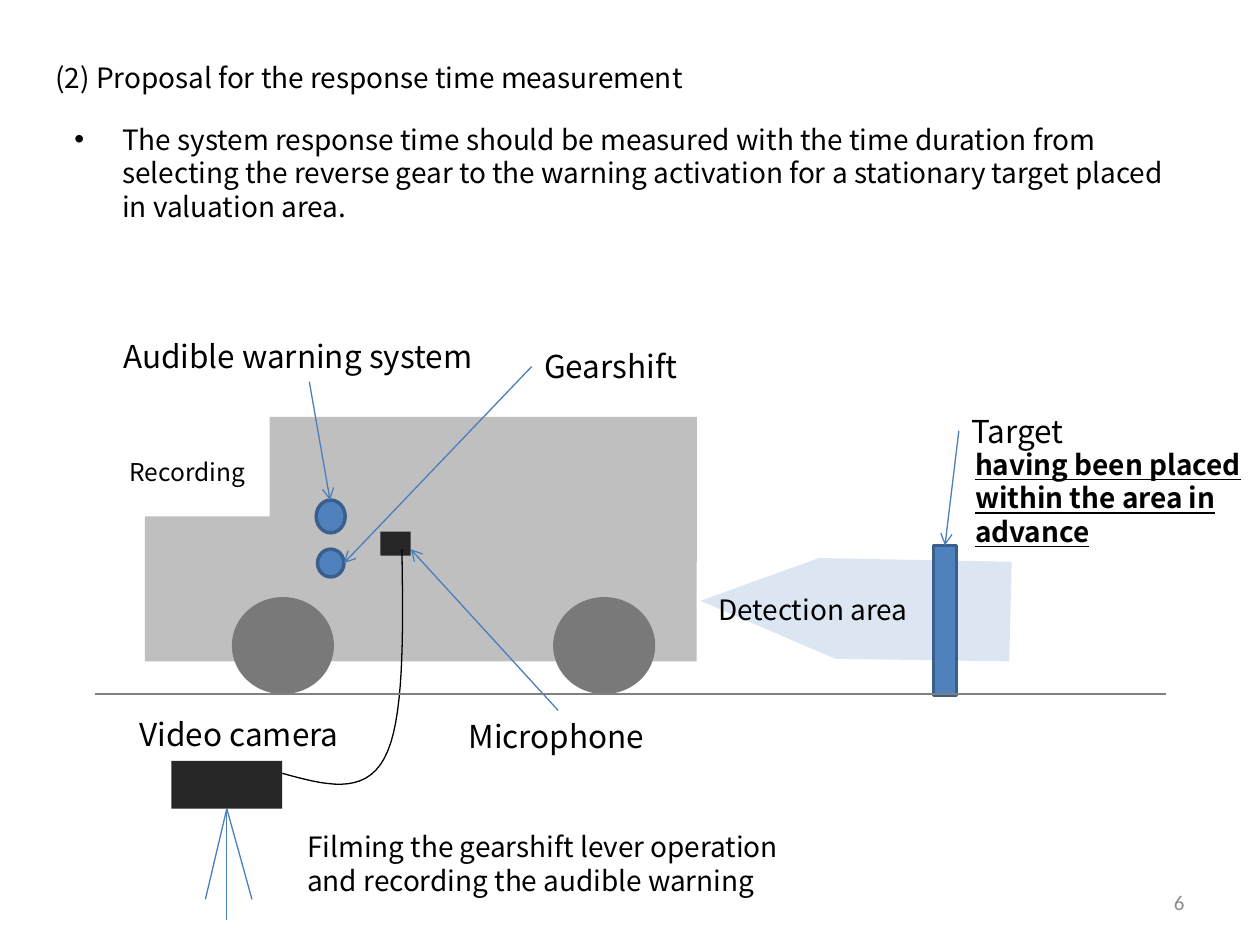
import pptx
import pptx.dml.color
import pptx.enum.shapes
import pptx.enum.text
import pptx.oxml.ns
import pptx.util

RGBColor = pptx.dml.color.RGBColor
Shapes = pptx.enum.shapes.MSO_SHAPE
Align = pptx.enum.text.PP_ALIGN
Anchor = pptx.enum.text.MSO_ANCHOR
Inches, Pt = pptx.util.Inches, pptx.util.Pt
qn = pptx.oxml.ns.qn

BLACK = RGBColor(0x00, 0x00, 0x00)
WHITE = RGBColor(0xFF, 0xFF, 0xFF)
BODY_GRAY = RGBColor(0xBF, 0xBF, 0xBF)
WHEEL_GRAY = RGBColor(0x79, 0x79, 0x79)
GROUND_GRAY = RGBColor(0x80, 0x80, 0x80)
NUMBER_GRAY = RGBColor(0x8C, 0x8C, 0x8C)
DEVICE_BLACK = RGBColor(0x26, 0x26, 0x26)
BLUE = RGBColor(0x4F, 0x81, 0xBD)
DARK_BLUE = RGBColor(0x3A, 0x5F, 0x8C)
ARROW_BLUE = RGBColor(0x4B, 0x7E, 0xBC)
PALE_BLUE = RGBColor(0xDC, 0xE6, 0xF2)

FONT = "Noto Sans CJK JP"
WIDTH, HEIGHT = Inches(10), Inches(7.51)
CELL = WIDTH / 100  # the grid has 100 columns; rows are as high as columns are wide


def grid(*lengths):
    return [round(length * CELL) for length in lengths]


def place(box, column, row):
    """Turn a position inside a box into a position on the slide."""
    return box[0] + column, box[1] + row


def write(shape, text, size=16, font=FONT, color=BLACK, bold=None, underline=None,
          align=Align.LEFT, anchor=Anchor.TOP, wrap=True, margin=1):
    frame = shape.text_frame
    frame.word_wrap = wrap
    frame.auto_size = pptx.enum.text.MSO_AUTO_SIZE.NONE
    frame.vertical_anchor = anchor
    frame.margin_left, frame.margin_right = grid(margin, 1)
    frame.margin_top = frame.margin_bottom = Inches(0.05)
    frame.text = text
    paragraph = frame.paragraphs[0]
    paragraph.alignment = align
    paragraph.space_before = Pt(0)
    run_font = paragraph.runs[0].font
    run_font.name, run_font.size = font, Pt(size)
    run_font.bold, run_font.underline = bold, underline
    run_font.color.rgb = color
    return paragraph


def paint(shape, fill=None, line=None, line_width=2):
    shape.shadow.inherit = False
    for target, color in ((shape.fill, fill), (shape.line.fill, line)):
        if color is None:
            target.background()
        else:
            target.solid()
            target.fore_color.rgb = color
    if line is not None:
        shape.line.width = Pt(line_width)
    return shape


def add_part(slide, kind, position, extent, fill, line=None):
    return paint(slide.shapes.add_shape(kind, *grid(*position, *extent)), fill, line)


def add_label(slide, text, position, extent, size=18):
    label = add_part(slide, Shapes.RECTANGLE, position, extent, WHITE)
    write(label, text, size=size, wrap=False)
    return label


def add_text(slide, text, position, extent, **text_format):
    write(slide.shapes.add_textbox(*grid(*position, *extent)), text, **text_format)


def add_line(slide, start, end, color=ARROW_BLUE, arrow=False):
    connector = slide.shapes.add_connector(
        pptx.enum.shapes.MSO_CONNECTOR.STRAIGHT, *grid(*start, *end))
    connector.line.color.rgb = color
    connector.line.width = Pt(0.75)
    properties = connector._element.spPr
    if arrow:
        line = properties.find(qn("a:ln"))
        line.append(line.makeelement(qn("a:tailEnd"), {"type": "arrow"}))
    properties.append(properties.makeelement(qn("a:effectLst"), {}))
    return connector


def add_outline(slide, box, points, closed=True):
    start, *others = [grid(*place(box, *point)) for point in points]
    builder = slide.shapes.build_freeform(*start)
    builder.add_line_segments(others, close=closed)
    return builder.convert_to_shape()


def bezier(*controls, steps=16):
    for step in range(steps + 1):
        t = step / steps
        weights = ((1 - t) ** 3, 3 * t * (1 - t) ** 2, 3 * t * t * (1 - t), t ** 3)
        yield [sum(weight * value for weight, value in zip(weights, values))
               for values in zip(*controls)]


def fill_placeholders(slide):
    title, body = slide.shapes.title, slide.placeholders[1]
    title.left, title.top, title.width, title.height = grid(3.4, 3, 92.5, 6.2)
    write(title, "(2) Proposal for the response time measurement", anchor=Anchor.MIDDLE)
    body.left, body.top, body.width, body.height = grid(4.9, 9.2, 90, 52)
    paragraph = write(body, "The system response time should be measured with the time "
                      "duration from selecting the reverse gear to the warning activation "
                      "for a stationary target placed in valuation area.")
    indent, = grid(3.8)
    properties = paragraph._p.get_or_add_pPr()
    properties.set("marL", str(indent))
    properties.set("indent", str(-indent))


def draw_vehicle(slide, box):
    for column, row, width in ((0, 7.9, 43.8), (9.9, 0, 33.9)):
        add_part(slide, Shapes.RECTANGLE, place(box, column, row), (width, 11.5), BODY_GRAY)
    for column in (6.9, 32.4):
        add_part(slide, Shapes.OVAL, place(box, column, 14.3), (8.1, 7.7), WHEEL_GRAY)


def draw_detection(slide, box):
    # Sensor cone
    cone = [(0, 3.4), (10.7, 8), (24.5, 8.2), (24.7, 0.3), (9.4, 0)]
    area = paint(add_outline(slide, box, cone), PALE_BLUE)
    write(area, "Detection area", anchor=Anchor.MIDDLE, margin=1.4)
    # Target post and its label
    target = add_part(slide, Shapes.RECTANGLE, place(box, 18.5, -1), (1.8, 11.9),
                      BLUE, DARK_BLUE)
    label = add_label(slide, "Target", place(box, 20.5, -12.1), (9.8, 4))
    add_text(slide, "having been placed within the area in advance",
             place(box, 20.8, -9.3), (23.6, 9.1), bold=True, underline=True)
    arrow = add_line(slide, place(box, 20.5, -10.1), place(box, 19.4, -1), arrow=True)
    arrow.begin_connect(label, 1)
    arrow.end_connect(target, 0)


def draw_camera(slide, box):
    add_label(slide, "Video camera", place(box, -3.5, -4.1), (18.8, 4))
    camera = add_part(slide, Shapes.RECTANGLE, box, (8.8, 3.8), DEVICE_BLACK)
    # Tripod
    for column, row in ((2.7, 11), (4.4, 12.6), (6.4, 11)):
        leg = add_line(slide, place(box, 4.4, 3.8), place(box, column, row))
        leg.begin_connect(camera, 2)
    add_text(slide, "Filming the gearshift lever operation and recording the audible warning",
             place(box, 9.8, 5), (41.5, 6.4))


def draw_devices(slide, box):
    # Warning speaker, gearshift and microphone inside the cabin
    add_part(slide, Shapes.OVAL, box, (2.3, 2.6), BLUE, DARK_BLUE)
    add_part(slide, Shapes.OVAL, place(box, 0.1, 3.9), (2.1, 2.2), BLUE, DARK_BLUE)
    add_part(slide, Shapes.RECTANGLE, place(box, 5.1, 2.5), (2.4, 1.9), DEVICE_BLACK)
    # Cable from the microphone down to the camera
    cable = [*bezier((6.8, 3.9), (6.9, 10.7), (7, 17.6), (5.4, 20.5)),
             *bezier((5.4, 20.5), (3.8, 23.5), (0.6, 22.6), (-2.7, 21.7))]
    paint(add_outline(slide, box, cable, closed=False), line=BLACK, line_width=0.75)
    # Labels, each with an arrow from the middle of one side
    add_label(slide, "Recording", place(box, -15.8, -3.9), (11.5, 3.4), size=14)
    callouts = (
        ("Audible warning system", (-16.3, -13.4), (31.5, 4), 2, (1.1, 0)),
        ("Gearshift", (17.1, -12.6), (13.1, 4), 1, (2.2, 5)),
        ("Microphone", (11.1, 16.7), (16.2, 4), 0, (7.5, 3.9)),
    )
    for text, position, extent, side, tip in callouts:
        label = add_label(slide, text, place(box, *position), extent)
        arrow = add_line(slide, place(box, *position), place(box, *tip), arrow=True)
        arrow.begin_connect(label, side)


def main():
    presentation = pptx.Presentation()
    presentation.slide_width, presentation.slide_height = WIDTH, HEIGHT
    slide = presentation.slides.add_slide(presentation.slide_layouts[1])
    fill_placeholders(slide)
    draw_vehicle(slide, (11.5, 33.1))
    draw_detection(slide, (55.6, 44.3))
    draw_camera(slide, (13.6, 60.4))
    draw_devices(slide, (25.1, 39.7))
    # Ground and slide number
    add_line(slide, (7.5, 55.1), (92.5, 55.1), GROUND_GRAY)
    add_text(slide, "6", (71.7, 69.6), (23.3, 4), size=12, font="Calibri",
             color=NUMBER_GRAY, align=Align.RIGHT, anchor=Anchor.MIDDLE)
    presentation.save("out.pptx")


if __name__ == "__main__":
    main()
